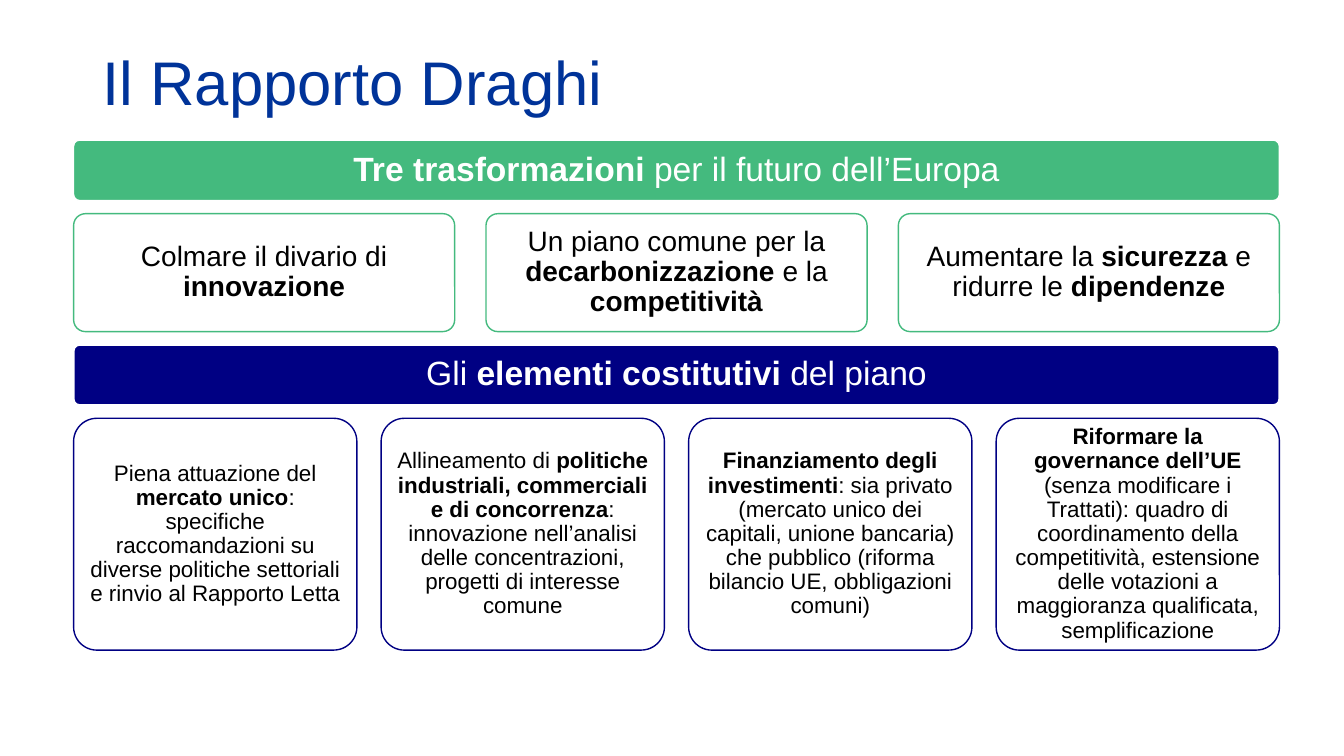
from dataclasses import dataclass

from pptx import Presentation
from pptx.dml.color import RGBColor
from pptx.enum.shapes import MSO_SHAPE as Shape
from pptx.enum.text import MSO_ANCHOR as Anchor, PP_ALIGN as Align
from pptx.util import Inches, Pt


@dataclass(frozen=True)
class Theme:
    font: str = "Arial"
    title_color: str = "003399"
    green: str = "44BA7E"
    navy: str = "000083"
    white: str = "FFFFFF"
    black: str = "000000"
    title_size: int = 44
    banner_size: int = 24
    goal_size: int = 20
    element_size: int = 16


@dataclass(frozen=True)
class Grid:
    left: float = 0.73
    top: float = 1.39
    width: float = 11.96
    row_heights: tuple = (0.6, 1.17, 0.6, 2.3)
    row_gap: float = 0.13

    def cell(self, row, column=0, columns=1, gap=0):
        """Left, top, width and height of one cell, in inches."""
        width = (self.width - gap * (columns - 1)) / columns
        left = self.left + column * (width + gap)
        top = self.top + sum(self.row_heights[:row]) + row * self.row_gap
        return left, top, width, self.row_heights[row]


class SlideBuilder:
    def __init__(self, slide, theme, grid):
        self.slide = slide
        self.theme = theme
        self.grid = grid

    def add_text(self, shape, runs, size, color, align, inset):
        """Fill a shape with one paragraph of (text, bold) runs."""
        frame = shape.text_frame
        frame.word_wrap = True
        frame.vertical_anchor = Anchor.MIDDLE
        frame.margin_left = frame.margin_right = Inches(inset)
        frame.margin_top = frame.margin_bottom = Inches(inset)
        paragraph = frame.paragraphs[0]
        paragraph.alignment = align
        paragraph.line_spacing = 0.9
        for text, bold in runs:
            run = paragraph.add_run()
            run.text = text
            run.font.name = self.theme.font
            run.font.size = Pt(size)
            run.font.bold = bold
            run.font.color.rgb = RGBColor.from_string(color)

    def title(self, text):
        box = self.slide.shapes.add_textbox(*map(Inches, (0.92, 0.4, 11.5, 0.89)))
        self.add_text(box, [(text, False)], self.theme.title_size,
                      self.theme.title_color, Align.LEFT, 0.1)

    def panel(self, cell, runs, size, color, fill, line, inset, line_width=1):
        """Rounded box whose corner radius is a tenth of its height."""
        shape = self.slide.shapes.add_shape(
            Shape.ROUNDED_RECTANGLE, *map(Inches, cell))
        shape.shadow.inherit = False
        shape.adjustments[0] = 0.1
        shape.fill.solid()
        shape.fill.fore_color.rgb = RGBColor.from_string(fill)
        shape.line.color.rgb = RGBColor.from_string(line)
        shape.line.width = Pt(line_width)
        self.add_text(shape, runs, size, color, Align.CENTER, inset)

    def banner(self, row, runs, fill, line_width):
        self.panel(self.grid.cell(row), runs, self.theme.banner_size,
                   self.theme.white, fill, self.theme.white, 0.07, line_width)

    def cards(self, row, texts, gap, size, line, inset):
        for column, runs in enumerate(texts):
            cell = self.grid.cell(row, column, len(texts), gap)
            self.panel(cell, runs, size, self.theme.black,
                       self.theme.white, line, inset)


TRANSFORMATIONS = [
    [("Colmare il divario di ", False), ("innovazione", True)],
    [("Un piano comune per la ", False), ("decarbonizzazione", True),
     (" e la ", False), ("competitività", True)],
    [("Aumentare la ", False), ("sicurezza", True),
     (" e ridurre le ", False), ("dipendenze", True)],
]

PLAN_ELEMENTS = [
    [("Piena attuazione del ", False), ("mercato unico", True),
     (": specifiche raccomandazioni su diverse politiche settoriali "
      "e rinvio al Rapporto Letta", False)],
    [("Allineamento di ", False),
     ("politiche industriali, commerciali e di concorrenza", True),
     (": innovazione nell’analisi delle concentrazioni, "
      "progetti di interesse comune", False)],
    [("Finanziamento degli investimenti", True),
     (": sia privato (mercato unico dei capitali, unione bancaria) "
      "che pubblico (riforma bilancio UE, obbligazioni comuni)", False)],
    [("Riformare la governance dell’UE ", True),
     ("(senza modificare i Trattati): quadro di coordinamento della "
      "competitività, estensione delle votazioni a maggioranza qualificata, "
      "semplificazione", False)],
]


def main():
    presentation = Presentation()
    presentation.slide_width = Inches(13.33)
    presentation.slide_height = Inches(7.5)
    slide = presentation.slides.add_slide(presentation.slide_layouts[6])
    theme = Theme()
    builder = SlideBuilder(slide, theme, Grid())

    builder.title("Il Rapporto Draghi")

    # Three transformations
    builder.banner(0, [("Tre trasformazioni ", True),
                       ("per il futuro dell’Europa", False)], theme.green, 1)
    builder.cards(1, TRANSFORMATIONS, 0.31, theme.goal_size, theme.green, 0.07)

    # Building blocks of the plan
    builder.banner(2, [("Gli ", False), ("elementi costitutivi ", True),
                       ("del piano", False)], theme.navy, 1.5)
    builder.cards(3, PLAN_ELEMENTS, 0.24, theme.element_size, theme.navy, 0.06)

    presentation.save("out.pptx")


if __name__ == "__main__":
    main()
